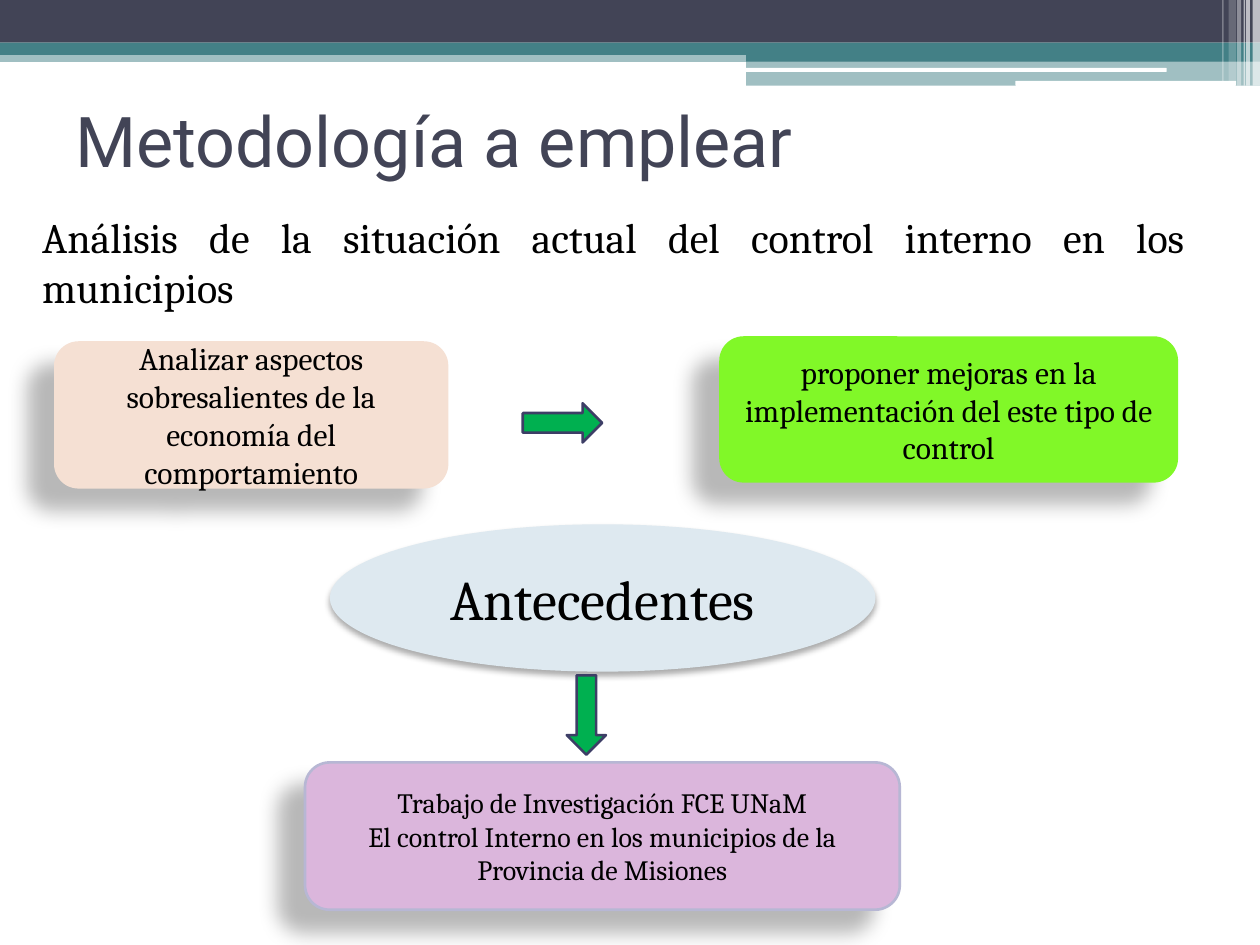
from lxml.etree import SubElement
from pptx import Presentation
from pptx.dml.color import RGBColor
from pptx.enum.shapes import MSO_SHAPE as SHAPE
from pptx.enum.text import MSO_ANCHOR as ANCHOR, PP_ALIGN as ALIGN
from pptx.oxml.ns import qn
from pptx.util import Cm, Pt

WHITE = RGBColor(0xFF, 0xFF, 0xFF)
BLACK = RGBColor(0x00, 0x00, 0x00)
NAVY = RGBColor(0x42, 0x44, 0x56)
TEAL = RGBColor(0x43, 0x80, 0x86)
LIME = RGBColor(0x81, 0xF8, 0x28)
LILAC = RGBColor(0xDB, 0xB6, 0xDC)
LILAC_EDGE = RGBColor(0xB7, 0xB7, 0xD4)
PEACH = RGBColor(0xF5, 0xE0, 0xD3)
PALE_BLUE = RGBColor(0xDE, 0xE9, 0xF0)
GREEN = RGBColor(0x00, 0xB0, 0x50)
ARROW_EDGE = RGBColor(0x3D, 0x3E, 0x66)

# Opacity %, blur pt, distance pt, direction in degrees
CARD_SHADOW = (28, 11.8, 19.7, 141)
ELLIPSE_SHADOW = (32, 3.5, 2.2, 90)

WIDTH, HEIGHT = 25.4, 19.05
RIGHT_BAND = 15.04


def set_alpha(color, percent):
    SubElement(color, qn("a:alpha"), val=str(percent * 1000))


def add_shadow(s, opacity, blur, distance, direction):
    effects = s._element.spPr.find(qn("a:effectLst"))
    shadow = SubElement(effects, qn("a:outerShdw"), blurRad=str(Pt(blur)),
                        dist=str(Pt(distance)), dir=str(direction * 60000),
                        algn="ctr", rotWithShape="0")
    set_alpha(SubElement(shadow, qn("a:srgbClr"), val=str(BLACK)), opacity)


def add_shape(slide, kind, box, fill, line=None, opacity=100, shadow=None):
    """Draw a preset shape; box is left, top, width, height in cm."""
    s = slide.shapes.add_shape(kind, *map(Cm, box))
    s.shadow.inherit = False
    s.fill.solid()
    s.fill.fore_color.rgb = fill
    if opacity < 100:
        set_alpha(s._element.spPr.find(qn("a:solidFill"))[0], opacity)
    if line is None:
        s.line.fill.background()
    else:
        s.line.color.rgb = line
        s.line.width = Pt(1.5)
    if shadow:
        add_shadow(s, *shadow)
    return s


def write(s, *lines, size, font="Cambria", color=BLACK, align=ALIGN.CENTER,
          anchor=ANCHOR.MIDDLE, indent=0, before=0):
    """Fill a shape with one paragraph per line."""
    tf = s.text_frame
    tf.word_wrap = True
    tf.vertical_anchor = anchor
    for i, line in enumerate(lines):
        p = tf.add_paragraph() if i else tf.paragraphs[0]
        p.alignment = align
        p.space_before = Pt(before)
        if indent:
            p._p.get_or_add_pPr().set("marL", str(Cm(indent)))
        r = p.add_run()
        r.text = line
        r.font.size = Pt(size)
        r.font.name = font
        r.font.color.rgb = color


def add_text(slide, box, text, **style):
    write(slide.shapes.add_textbox(*map(Cm, box)), text, **style)


def add_arrow(slide, left, top, rotation=0):
    s = add_shape(slide, SHAPE.RIGHT_ARROW, (left, top, 1.6, 0.79), GREEN,
                  line=ARROW_EDGE)
    s.rotation = rotation


def add_header(slide):
    bands = [
        (0, 1.02, 0.23, TEAL, 50),
        (0, 0, 0.86, NAVY, 100),
        (0, 0.86, 0.25, TEAL, 100),
        (RIGHT_BAND, 0.99, 0.25, TEAL, 100),
        (RIGHT_BAND, 1.22, 0.51, TEAL, 50),
    ]
    for left, top, height, color, opacity in bands:
        add_shape(slide, SHAPE.RECTANGLE, (left, top, WIDTH - left, height),
                  color, opacity=opacity)

    for box in [(15.01, 1.37, 8.51, 0.08), (20.47, 1.63, 4.45, 0.1)]:
        add_shape(slide, SHAPE.ROUNDED_RECTANGLE, box, WHITE)

    stripes = [
        (25.25, 0.15, 1.73, 65),
        (25.12, 0.08, 1.73, 65),
        (25.07, 0.03, 1.73, 60),
        (24.94, 0.08, 1.73, 40),
        (24.77, 0.15, 1.63, 20),
        (24.64, 0.03, 1.63, 30),
    ]
    for left, width, height, opacity in stripes:
        add_shape(slide, SHAPE.RECTANGLE, (left, 0, width, height), WHITE,
                  opacity=opacity)


def add_card(slide, box, fill, *lines, size=18, line=None):
    s = add_shape(slide, SHAPE.ROUNDED_RECTANGLE, box, fill, line=line,
                  shadow=CARD_SHADOW)
    write(s, *lines, size=size)


def main():
    prs = Presentation()
    prs.slide_width, prs.slide_height = Cm(WIDTH), Cm(HEIGHT)
    slide = prs.slides.add_slide(prs.slide_layouts[6])

    add_header(slide)
    add_text(slide, (1.27, 1.32, 22.86, 2.97), "Metodología a emplear",
             size=40, font="Roboto", color=NAVY, align=ALIGN.LEFT)
    add_text(slide, (0.3, 4.14, 23.83, 2.97),
             "Análisis de la situación actual del control interno en los "
             "municipios",
             size=24, align=ALIGN.JUSTIFY, anchor=ANCHOR.TOP, indent=0.3,
             before=3)

    add_card(slide, (1.09, 6.88, 7.95, 2.97), PEACH,
             "Analizar aspectos sobresalientes de la economía del "
             "comportamiento")
    add_arrow(slide, 10.54, 8.13)
    add_card(slide, (14.5, 6.78, 9.25, 2.95), LIME,
             "proponer mejoras en la implementación del este tipo de control")

    ellipse = add_shape(slide, SHAPE.OVAL, (6.65, 10.57, 11, 2.97), PALE_BLUE,
                        shadow=ELLIPSE_SHADOW)
    write(ellipse, "Antecedentes", size=32)
    add_arrow(slide, 11.02, 14.02, rotation=90)
    add_card(slide, (6.15, 15.37, 11.99, 2.97), LILAC,
             "Trabajo de Investigación FCE UNaM",
             "El control Interno en los municipios de la Provincia de Misiones",
             size=16, line=LILAC_EDGE)

    prs.save("out.pptx")


if __name__ == "__main__":
    main()
